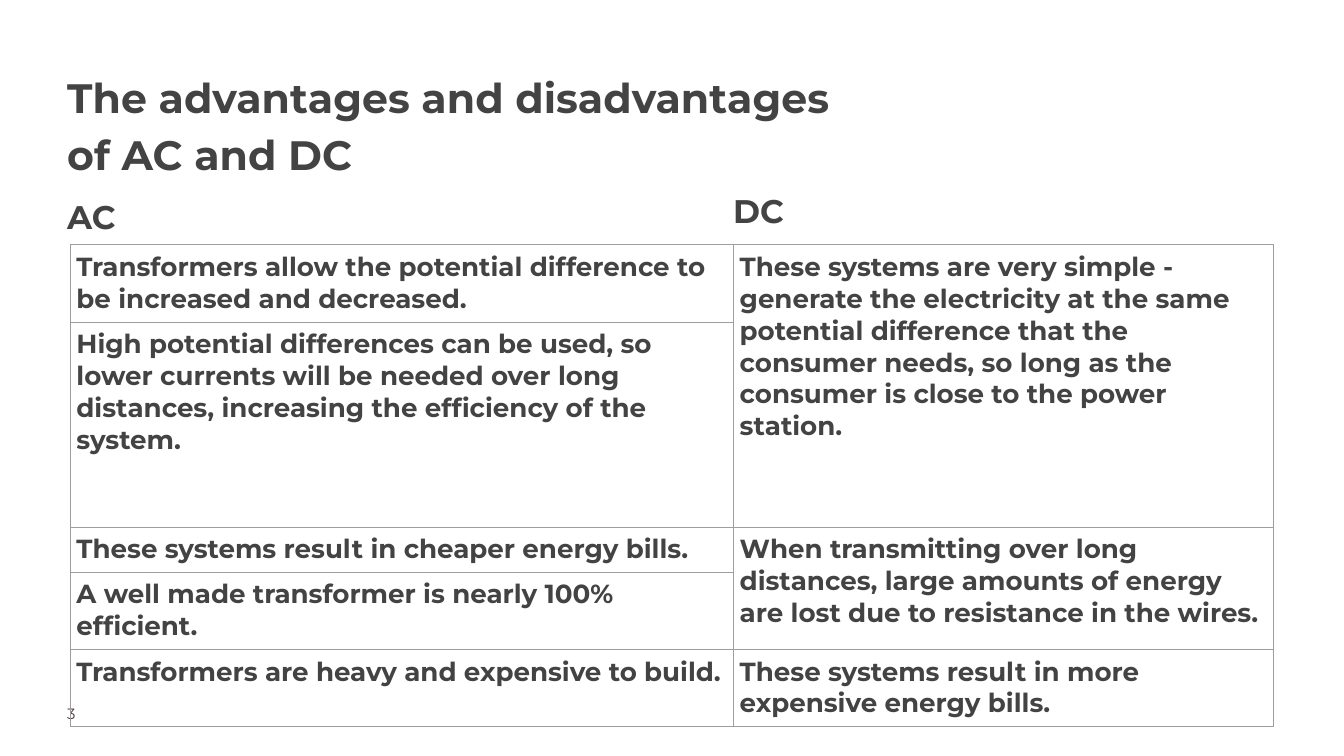
"""Builds a slide that compares the advantages and disadvantages of AC and DC."""
from lxml import etree
from pptx import Presentation
from pptx import util as u
from pptx.dml.color import RGBColor
from pptx.enum import text
from pptx.oxml import ns

GREY = "434343"


def rgb(value):
    return RGBColor.from_string(value)


def write(frame, wording, size, color=GREY, bold=True, inset=0.0):
    frame.word_wrap = True
    frame.vertical_anchor = text.MSO_ANCHOR.TOP
    paragraph = frame.paragraphs[0]
    paragraph.alignment = text.PP_ALIGN.LEFT
    run = paragraph.add_run()
    run.text = wording
    run.font.name = "Montserrat"
    run.font.size = u.Pt(size)
    run.font.bold = bold
    run.font.color.rgb = rgb(color)
    return paragraph


deck = Presentation()
deck.slide_width = u.Cm(50.8)
deck.slide_height = u.Cm(28.58)
slide = deck.slides.add_slide(deck.slide_layouts[6])

labels = [
    ("The advantages and disadvantages of AC and DC", 2.54, 2.46, 29.74, 4.52, 44, GREY, True, 1.15, 0),
    ("AC", 2.54, 6.98, 3.99, 2.44, 35, GREY, True, 1.3, 20),
    ("DC", 27.71, 6.78, 3.99, 2.44, 35, GREY, True, 1.3, 20),
    ("3", 2.54, 26.62, 3.99, 0.99, 16, "4B3241", False, 1.0, 0),
]
for wording, left, top, width, height, size, color, bold, spacing, after in labels:
    label = slide.shapes.add_textbox(u.Cm(left), u.Cm(top), u.Cm(width), u.Cm(height)).text_frame
    label.margin_left = label.margin_right = label.margin_top = label.margin_bottom = 0
    paragraph = write(label, wording, size, color, bold)
    paragraph.line_spacing = spacing
    paragraph.space_after = u.Pt(after)

column_widths = [25.07, 20.42]
row_heights = [2.92, 7.75, 1.7, 2.92, 2.92]
comparison = slide.shapes.add_table(
    len(row_heights), len(column_widths), u.Cm(2.64), u.Cm(9.25),
    u.Cm(sum(column_widths)), u.Cm(sum(row_heights))).table
comparison.first_row = False
comparison.horz_banding = False
for column, width in zip(comparison.columns, column_widths):
    column.width = u.Cm(width)
for row, height in zip(comparison.rows, row_heights):
    row.height = u.Cm(height)

for cell in comparison.iter_cells():
    cell.fill.background()
    cell.margin_left = cell.margin_right = cell.margin_top = cell.margin_bottom = u.Cm(0.25)
    properties = cell._tc.get_or_add_tcPr()
    for position, side in enumerate(("lnL", "lnR", "lnT", "lnB")):
        border = etree.Element(ns.qn(f"a:{side}"), w=str(u.Pt(0.75)))
        fill = etree.SubElement(border, ns.qn("a:solidFill"))
        etree.SubElement(fill, ns.qn("a:srgbClr"), val="9E9E9E")
        properties.insert(position, border)

for first_row in (0, 2):
    comparison.cell(first_row, 1).merge(comparison.cell(first_row + 1, 1))

points = {
    (0, 0): "Transformers allow the potential difference to be increased and decreased.",
    (1, 0): "High potential differences can be used, so lower currents will be needed "
            "over long distances, increasing the efficiency of the system.",
    (2, 0): "These systems result in cheaper energy bills.",
    (3, 0): "A well made transformer is nearly 100% efficient.",
    (4, 0): "Transformers are heavy and expensive to build.",
    (0, 1): "These systems are very simple - generate the electricity at the same potential "
            "difference that the consumer needs, so long as the consumer is close to the power station.",
    (2, 1): "When transmitting over long distances, large amounts of energy are lost "
            "due to resistance in the wires.",
    (4, 1): "These systems result in more expensive energy bills.",
}
for (row, column), wording in points.items():
    write(comparison.cell(row, column).text_frame, wording, 28)

deck.save("out.pptx")
